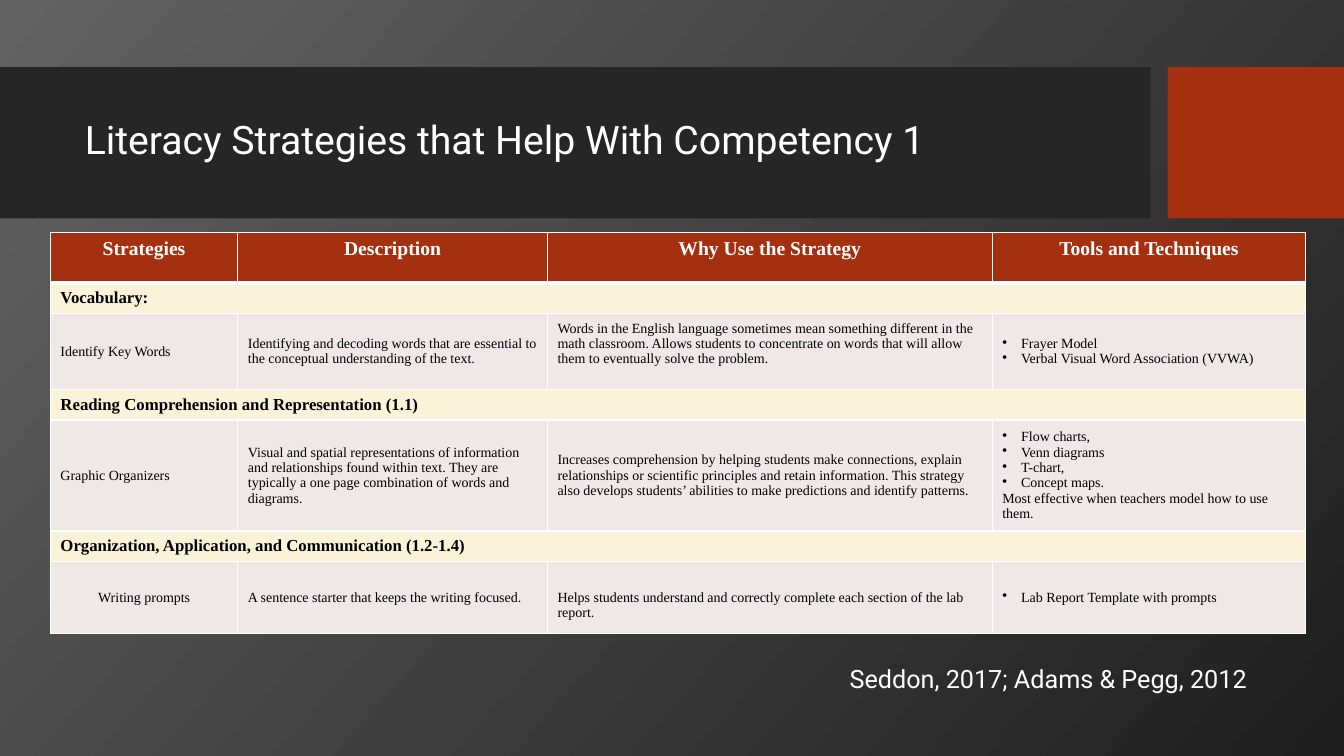
import pptx
import pptx.dml.color
import pptx.enum.shapes
import pptx.enum.text
import pptx.oxml
import pptx.oxml.ns
import pptx.util

Pt = pptx.util.Pt
ALIGN = pptx.enum.text.PP_ALIGN
ANCHOR = pptx.enum.text.MSO_ANCHOR

COLORS = {
    "light": "626262", "dark": "1F1F1F", "band": "262626", "accent": "A5300F",
    "section": "FAF3D9", "body": "F0E8E7", "white": "FFFFFF", "black": "000000",
}
TITLE_FONT = {"name": "Roboto", "size": Pt(28), "bold": False}
SOURCE_FONT = {"name": "Roboto", "size": Pt(18), "bold": False}
TABLE_FONTS = {
    "accent": {"name": "Times New Roman", "size": Pt(14), "bold": True},
    "section": {"name": "Times New Roman", "size": Pt(12), "bold": True},
    "body": {"name": "Times New Roman", "size": Pt(10), "bold": False},
}
BULLET = "• "
BLANK_LINE = 11.1

COLUMN_WIDTHS = [133.9, 221.2, 317.7, 224]
ROW_HEIGHTS = [36, 20.5, 51.5, 20.5, 73.6, 20.5, 51.5]
HEADINGS = ["Strategies", "Description", "Why Use the Strategy", "Tools and Techniques"]
STRATEGY_ROWS = [
    HEADINGS,
    ["Vocabulary:"],
    ["Identify Key Words",
     "Identifying and decoding words that are essential to the conceptual "
     "understanding of the text.",
     "Words in the English language sometimes mean something different in the math "
     "classroom. Allows students to concentrate on words that will allow them to "
     "eventually solve the problem.",
     "• Frayer Model\n• Verbal Visual Word Association (VVWA)"],
    ["Reading Comprehension and Representation (1.1)"],
    ["Graphic Organizers",
     "Visual and spatial representations of information and relationships found within "
     "text. They are typically a one page combination of words and diagrams.",
     "Increases comprehension by helping students make connections, explain relationships "
     "or scientific principles and retain information. This strategy also develops "
     "students’ abilities to make predictions and identify patterns.",
     "• Flow charts,\n• Venn diagrams\n• T-chart,\n• Concept maps.\n"
     "Most effective when teachers model how to use them."],
    ["Organization, Application, and Communication (1.2-1.4)"],
    ["Writing prompts",
     "A sentence starter that keeps the writing focused.",
     "Helps students understand and correctly complete each section of the lab report.",
     "• Lab Report Template with prompts"],
]
# Cells whose text sits above or below the middle of the row
CELL_MARGINS = {
    (2, 2): {"margin_bottom": Pt(3.6 + BLANK_LINE)},
    (6, 2): {"margin_top": Pt(3.6 + BLANK_LINE)},
}


def rgb(color):
    return pptx.dml.color.RGBColor.from_string(COLORS[color])


def apply(target, values):
    for key, value in values.items():
        setattr(target, key, value)


def fill_paragraph(paragraph, text, font, color, align=ALIGN.LEFT):
    if text.startswith(BULLET):
        properties = paragraph._p.get_or_add_pPr()
        properties.set("marL", str(Pt(13.5)))
        properties.set("indent", str(-Pt(13.5)))
        bullet = pptx.oxml.parse_xml(
            f'<a:buChar {pptx.oxml.ns.nsdecls("a")} char="{BULLET.strip()}"/>')
        properties.append(bullet)
        text = text.removeprefix(BULLET)
    paragraph.alignment = align
    run = paragraph.add_run()
    run.text = text
    apply(run.font, font)
    run.font.color.rgb = rgb(color)


def add_text(slide, box, text, font, align, anchor):
    frame = slide.shapes.add_textbox(*map(Pt, box)).text_frame
    apply(frame, {"word_wrap": True, "vertical_anchor": anchor})
    fill_paragraph(frame.paragraphs[0], text, font, "white", align)
    return frame


def add_background(slide):
    fill = slide.background.fill
    fill.gradient()
    fill.gradient_angle = 360 - 42
    for stop, color in zip(fill.gradient_stops, ("light", "dark")):
        stop.color.rgb = rgb(color)


def add_title_band(slide, left, top, width, height):
    # Dark band and accent block, parted by a gap
    accent_width, gap = 126, 12
    band_width = width - accent_width - gap
    for color, x, block_width in (("band", left, band_width),
                                  ("accent", left + width - accent_width, accent_width)):
        block = slide.shapes.add_shape(pptx.enum.shapes.MSO_SHAPE.RECTANGLE,
                                       Pt(x), Pt(top), Pt(block_width), Pt(height))
        block.shadow.inherit = False
        block.fill.solid()
        block.fill.fore_color.rgb = rgb(color)
        block.line.fill.background()
    # Title
    title_box = (left + 53.5, top + 11, band_width - 65, height - 23)
    title = add_text(slide, title_box, "Literacy Strategies that Help With Competency 1",
                     TITLE_FONT, ALIGN.LEFT, ANCHOR.MIDDLE)
    title.paragraphs[0].line_spacing = 0.9


def add_borders(cell, row):
    widths = {"L": 1, "R": 1, "T": 3 if row == 1 else 1, "B": 3 if row == 0 else 1}
    for side, width in widths.items():
        cell._tc.get_or_add_tcPr().append(pptx.oxml.parse_xml(
            f'<a:ln{side} {pptx.oxml.ns.nsdecls("a")} w="{Pt(width)}"><a:solidFill>'
            f'<a:srgbClr val="{COLORS["white"]}"/></a:solidFill></a:ln{side}>'))


def add_strategy_table(slide, left, top):
    table = slide.shapes.add_table(
        len(ROW_HEIGHTS), len(COLUMN_WIDTHS), Pt(left), Pt(top),
        Pt(sum(COLUMN_WIDTHS)), Pt(sum(ROW_HEIGHTS))).table
    for column, width in zip(table.columns, COLUMN_WIDTHS):
        column.width = Pt(width)
    for r, (height, texts) in enumerate(zip(ROW_HEIGHTS, STRATEGY_ROWS)):
        table.rows[r].height = Pt(height)
        kind = "accent" if r == 0 else "section" if len(texts) == 1 else "body"
        for c in range(len(COLUMN_WIDTHS)):
            cell = table.cell(r, c)
            add_borders(cell, r)
            cell.fill.solid()
            cell.fill.fore_color.rgb = rgb(kind)
        if kind == "section":
            table.cell(r, 0).merge(table.cell(r, len(COLUMN_WIDTHS) - 1))
        for c, text in enumerate(texts):
            cell = table.cell(r, c)
            cell.vertical_anchor = ANCHOR.TOP if r < 2 else ANCHOR.MIDDLE
            apply(cell, CELL_MARGINS.get((r, c), {}))
            centred = kind == "accent" or text == "Writing prompts"
            for i, line in enumerate(text.split("\n")):
                frame = cell.text_frame
                paragraph = frame.add_paragraph() if i else frame.paragraphs[0]
                fill_paragraph(paragraph, line, TABLE_FONTS[kind],
                               "white" if kind == "accent" else "black",
                               ALIGN.CENTER if centred else ALIGN.LEFT)


def add_source(slide, box):
    add_text(slide, box, "Seddon, 2017; Adams & Pegg, 2012",
             SOURCE_FONT, ALIGN.RIGHT, ANCHOR.TOP)


def main():
    deck = pptx.Presentation()
    apply(deck, {"slide_width": Pt(960), "slide_height": Pt(540)})
    slide = deck.slides.add_slide(deck.slide_layouts[6])
    add_background(slide)
    add_title_band(slide, 0, 48, 960, 108)
    add_strategy_table(slide, 36, 166.3)
    add_source(slide, (569.5, 470.2, 328.3, 29))
    deck.save("out.pptx")


if __name__ == "__main__":
    main()
